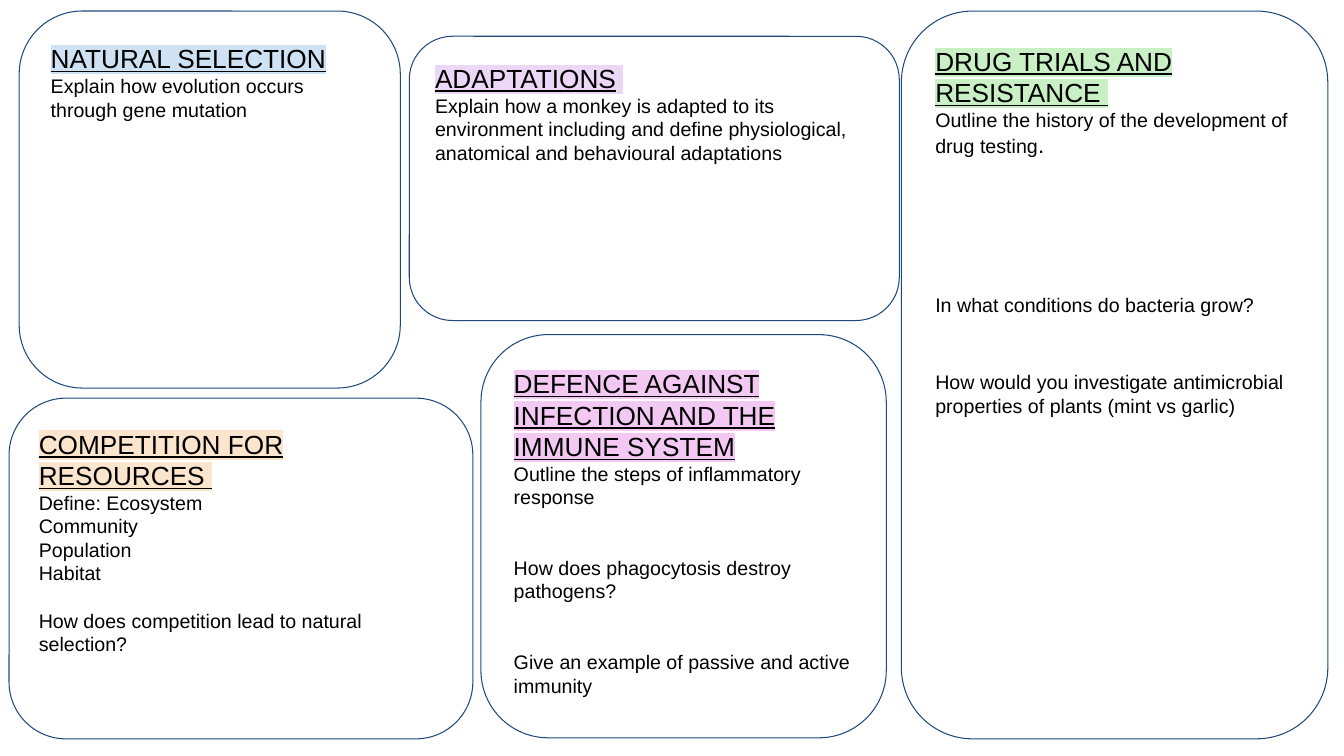
import pptx
import pptx.util
import pptx.dml.color
import pptx.enum.shapes
import pptx.enum.text
import pptx.oxml.ns
import lxml.etree


def colour(value):
    return pptx.dml.color.RGBColor.from_string(value)


class RevisionSheet:
    font_name = "Arial"
    ink = "000000"
    outline = "1F497D"
    heading_size = 18.7
    body_size = 14
    inset = 0.13

    def __init__(self, presentation):
        self.slide = presentation.slides.add_slide(presentation.slide_layouts[6])

    def panel(self, left, top, width, height, rounding=0.167):
        panel = self.slide.shapes.add_shape(
            pptx.enum.shapes.MSO_SHAPE.ROUNDED_RECTANGLE,
            *map(pptx.util.Inches, (left, top, width, height)))
        panel.adjustments[0] = rounding
        panel.shadow.inherit = False
        panel.fill.background()
        panel.line.color.rgb = colour(self.outline)
        panel.line.width = pptx.util.Pt(0.75)
        frame = panel.text_frame
        frame.word_wrap = True
        frame.vertical_anchor = pptx.enum.text.MSO_ANCHOR.TOP
        frame.margin_left = frame.margin_right = pptx.util.Inches(self.inset)
        frame.margin_top = frame.margin_bottom = pptx.util.Inches(self.inset)
        return frame

    def format(self, paragraph, size):
        paragraph.alignment = pptx.enum.text.PP_ALIGN.LEFT
        paragraph.font.name = self.font_name
        paragraph.font.size = pptx.util.Pt(size)
        paragraph.font.color.rgb = colour(self.ink)

    def highlight(self, run, tint):
        qn = pptx.oxml.ns.qn
        mark = lxml.etree.SubElement(run.font._element, qn("a:highlight"))
        lxml.etree.SubElement(mark, qn("a:srgbClr"), val=tint)

    def heading(self, frame, pieces, tint):
        paragraph = frame.paragraphs[0]
        self.format(paragraph, self.heading_size)
        for text, underlined in pieces:
            run = paragraph.add_run()
            run.text = text
            run.font.underline = underlined
            self.highlight(run, tint)

    def prompt(self, frame, text, gap):
        paragraph = frame.add_paragraph()
        self.format(paragraph, self.body_size)
        paragraph.space_before = pptx.util.Pt(gap)
        paragraph.add_run().text = text
        return paragraph

    def topic(self, place, pieces, tint, prompts):
        frame = self.panel(*place)
        self.heading(frame, pieces, tint)
        return [self.prompt(frame, text, gap) for text, gap in prompts]


def main():
    presentation = pptx.Presentation()
    presentation.slide_width = pptx.util.Inches(13.33)
    presentation.slide_height = pptx.util.Inches(7.5)
    sheet = RevisionSheet(presentation)

    sheet.topic((0.19, 0.11, 3.78, 3.74), [("NATURAL SELECTION", True)], "CFE2F3", [
        ("Explain how evolution occurs through gene mutation", 0)])
    sheet.topic((4.06, 0.36, 4.86, 2.82, 0.152),
                [("ADAPTATIONS", True), (" ", False)], "EDD7F6", [
        ("Explain how a monkey is adapted to its environment including and define "
         "physiological, anatomical and behavioural adaptations", 0)])
    sheet.topic((0.09, 3.95, 4.6, 3.38), [("COMPETITION FOR RESOURCES ", True)], "FCE5CD", [
        ("Define: Ecosystem", 0),
        ("Community", 0),
        ("Population", 0),
        ("Habitat", 0),
        ("How does competition lead to natural selection?", 16.8)])
    sheet.topic((4.77, 3.32, 4.02, 4),
                [("DEFENCE AGAINST INFECTION AND THE IMMUNE SYSTEM", True)], "F3C9F3", [
        ("Outline the steps of inflammatory response", 0),
        ("How does phagocytosis destroy pathogens?", 33.6),
        ("Give an example of passive and active immunity", 33.6)])
    history, *_ = sheet.topic(
        (8.94, 0.11, 4.23, 7.22), [("DRUG TRIALS AND RESISTANCE ", True)], "C9EFC4", [
            ("Outline the history of the development of drug testing", 0),
            ("In what conditions do bacteria grow?", 96),
            ("How would you investigate antimicrobial properties of plants (mint vs garlic)", 38.4)])
    full_stop = history.add_run()
    full_stop.text = "."
    full_stop.font.size = pptx.util.Pt(16)

    presentation.save("out.pptx")


if __name__ == "__main__":
    main()
